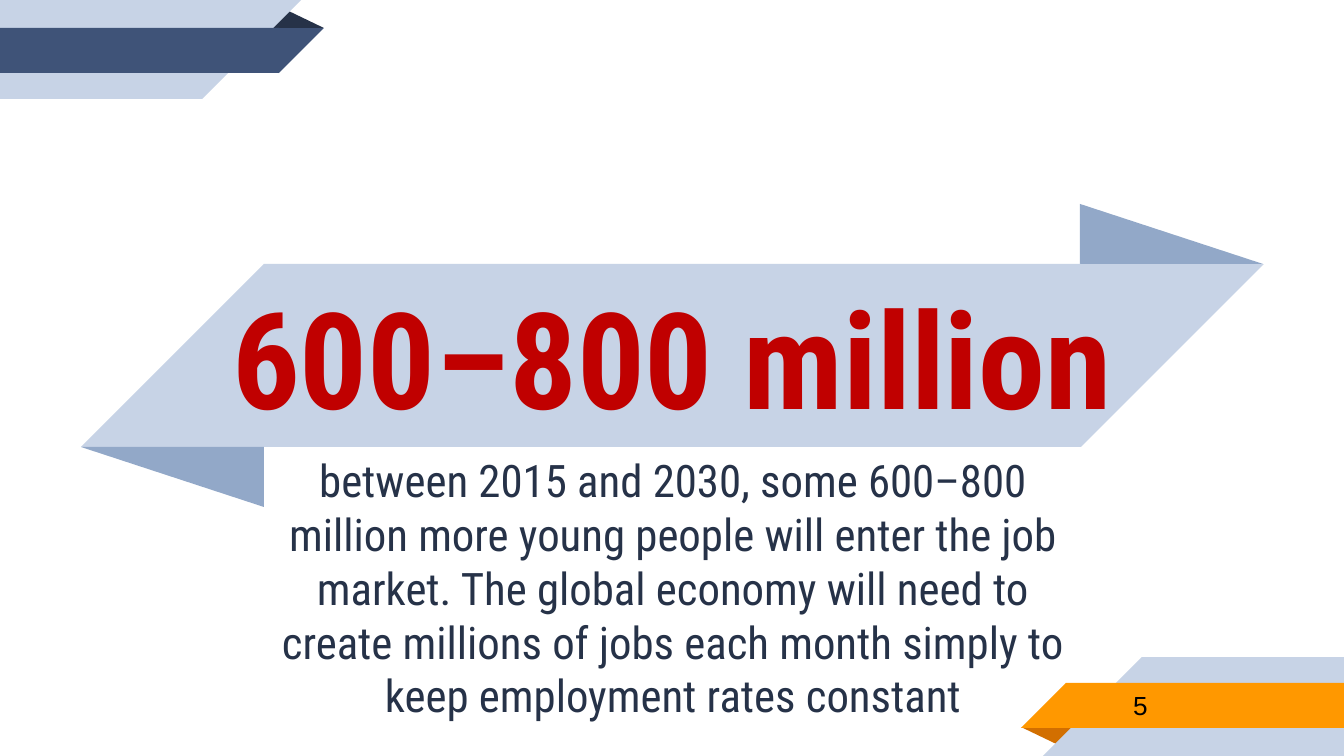
import pptx
import pptx.util
from pptx.dml.color import RGBColor
from pptx.enum.shapes import MSO_SHAPE
from pptx.enum.text import MSO_ANCHOR, MSO_AUTO_SIZE, PP_ALIGN

PX_PER_INCH = 134.4
TITLE_ONLY = 5
INSET = 13
FONT = "Roboto Condensed"
NAVY = "263248"
INDIGO = "3F5378"
PALE_BLUE = "C7D3E6"
MID_BLUE = "92A8C8"
ORANGE = "FF9800"
DARK_ORANGE = "D26F00"


def px(value):
    return pptx.util.Inches(value / PX_PER_INCH)


def color(hex_string):
    return RGBColor.from_string(hex_string)


def add_piece(slide, kind, box, fill):
    shape = slide.shapes.add_shape(kind, *map(px, box))
    shape.shadow.inherit = False
    shape.fill.solid()
    shape.fill.fore_color.rgb = color(fill)
    shape.line.fill.background()
    return shape


def add_fold(slide, box, apex, fill, upside_down=False):
    """Add the triangle that shows the folded back of a ribbon."""
    fold = add_piece(slide, MSO_SHAPE.ISOSCELES_TRIANGLE, box, fill)
    fold.adjustments[0] = apex
    fold.rotation = 180 if upside_down else 0


def add_band(slide, box, fill, ends):
    """Add a rectangle with 45-degree slanted ends, named in ends."""
    left, top, width, height = box
    add_piece(slide, MSO_SHAPE.RECTANGLE, box, fill)
    for end in ends:
        end_left = left + width if end == "right" else left - height
        tip = add_piece(slide, MSO_SHAPE.RIGHT_TRIANGLE,
                        (end_left, top, height, height), fill)
        tip.rotation = 180 if end == "right" else 0
        tip.element.spPr.xfrm.set("flipH", "1")


def format_text(shape, box, text, size, text_color, font=FONT,
                bold=False, align=PP_ALIGN.CENTER, space_after=0):
    shape.left, shape.top, shape.width, shape.height = map(px, box)
    frame = shape.text_frame
    frame.text = text
    frame.word_wrap = True
    frame.auto_size = MSO_AUTO_SIZE.NONE
    frame.vertical_anchor = MSO_ANCHOR.MIDDLE
    frame.margin_left = frame.margin_right = px(INSET)
    frame.margin_top = frame.margin_bottom = px(INSET)
    paragraph = frame.paragraphs[0]
    paragraph.alignment = align
    paragraph.space_after = pptx.util.Pt(space_after)
    run_font = paragraph.runs[0].font
    run_font.name = font
    run_font.size = pptx.util.Pt(size)
    run_font.bold = bold
    run_font.color.rgb = color(text_color)


def add_text(slide, box, *args, **kwargs):
    text_box = slide.shapes.add_textbox(*map(px, box))
    format_text(text_box, box, *args, **kwargs)


def add_corner_ribbons(slide):
    add_fold(slide, (1021, 727, 58, 19), 0.32, DARK_ORANGE, upside_down=True)
    add_band(slide, (1142, 657, 202, 99), PALE_BLUE, ["left"])
    add_band(slide, (1066, 683, 278, 45), ORANGE, ["left"])

    add_fold(slide, (266, 9, 58, 19), 0.32, NAVY)
    add_band(slide, (0, 0, 202, 99), PALE_BLUE, ["right"])
    add_band(slide, (0, 28, 279, 45), INDIGO, ["right"])


def add_title_ribbon(slide):
    add_fold(slide, (1080, 204, 183, 60), 0, MID_BLUE)
    add_band(slide, (264, 264, 817, 183), PALE_BLUE, ["left", "right"])
    add_fold(slide, (81, 447, 183, 60), 0, MID_BLUE, upside_down=True)


def main():
    presentation = pptx.Presentation()
    presentation.slide_width = px(1344)
    presentation.slide_height = px(756)
    slide = presentation.slides.add_slide(presentation.slide_layouts[TITLE_ONLY])

    add_corner_ribbons(slide)
    add_title_ribbon(slide)

    title = slide.shapes.title
    format_text(title, (82, 266, 1181, 180), "600–800 million",
                72, "C00000", bold=True)
    # The placeholder comes first in the tree; bring it above the ribbon.
    title.element.getparent().append(title.element)

    add_text(slide, (264, 446, 818, 283),
             "between 2015 and 2030, some 600–800 million more young people "
             "will enter the job market. The global economy will need to "
             "create millions of jobs each month simply to keep employment "
             "rates constant", 24, NAVY, space_after=10)
    add_text(slide, (1120, 682, 219, 47), "5", 14, "000000",
             font="Arial", align=PP_ALIGN.LEFT)

    presentation.save("out.pptx")


if __name__ == "__main__":
    main()
